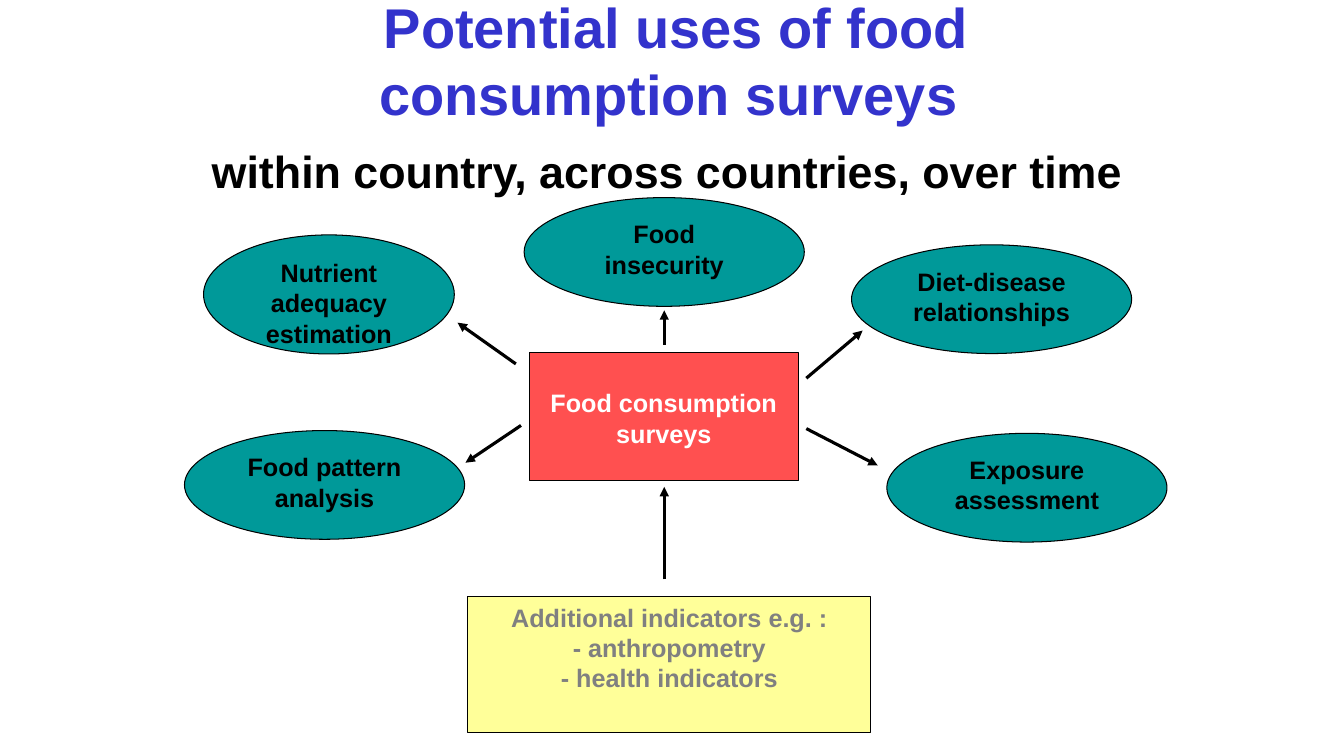
import pptx
import pptx.util
import pptx.dml.color
import pptx.enum.shapes
import pptx.enum.text
import pptx.oxml
import pptx.oxml.ns

Cm = pptx.util.Cm
Pt = pptx.util.Pt
SHAPE = pptx.enum.shapes.MSO_SHAPE
CENTER = pptx.enum.text.PP_ALIGN.CENTER


def color(hex_code):
    return pptx.dml.color.RGBColor.from_string(hex_code)


presentation = pptx.Presentation()
presentation.slide_width = Cm(33.87)
presentation.slide_height = Cm(19.05)
slide = presentation.slides.add_slide(presentation.slide_layouts[6])

# Title with subtitle
title = slide.shapes.add_textbox(Cm(4.93), Cm(0.43), Cm(24.21), Cm(3.99))
title.text_frame.word_wrap = True
title.text_frame.vertical_anchor = pptx.enum.text.MSO_ANCHOR.MIDDLE
paragraph = title.text_frame.paragraphs[0]
paragraph.alignment = CENTER
title_runs = [
    ("Potential uses of food consumption surveys ", 40, "3333CC"),
    ("within country, across countries, over time", 32, "000000"),
    (" ", 44, "000000"),
]
for index, (text, size, text_color) in enumerate(title_runs):
    if index == 1:
        paragraph.add_line_break()
    run = paragraph.add_run()
    run.text = text
    run.font.name = "Arial"
    run.font.size = Pt(size)
    run.font.bold = True
    run.font.color.rgb = color(text_color)

# Uses, surveys and indicators: preset, left, top, width, height, fill, text color, top margin, lines
OVAL_STYLE = ("009999", "000000", 0.13)
boxes = [
    (SHAPE.OVAL, 5.13, 5.92, 6.32, 3.0, *OVAL_STYLE, ["Nutrient adequacy estimation"]),
    (SHAPE.OVAL, 4.65, 10.85, 7.06, 2.74, *OVAL_STYLE, ["Food pattern analysis"]),
    (SHAPE.OVAL, 22.35, 10.92, 7.06, 2.74, *OVAL_STYLE, ["Exposure assessment"]),
    (SHAPE.OVAL, 21.46, 6.17, 7.06, 2.74, *OVAL_STYLE, ["Diet-disease relationships"]),
    (SHAPE.OVAL, 13.21, 4.98, 7.06, 2.74, *OVAL_STYLE, ["Food insecurity"]),
    (SHAPE.RECTANGLE, 13.34, 8.89, 6.78, 3.23, "FF5050", "FFFFFF", 0.88,
     ["Food consumption surveys"]),
    (SHAPE.RECTANGLE, 11.79, 15.04, 10.16, 3.43, "FFFF99", "808080", 0.13,
     ["Additional indicators e.g. :", "- anthropometry", "- health indicators"]),
]
for preset, left, top, width, height, fill, text_color, margin_top, lines in boxes:
    shape = slide.shapes.add_shape(preset, Cm(left), Cm(top), Cm(width), Cm(height))
    shape.shadow.inherit = False
    shape.fill.solid()
    shape.fill.fore_color.rgb = color(fill)
    shape.line.color.rgb = color("000000")
    shape.line.width = Pt(0.75)
    frame = shape.text_frame
    frame.word_wrap = True
    frame.vertical_anchor = pptx.enum.text.MSO_ANCHOR.TOP
    frame.margin_top = Cm(margin_top)
    frame.text = "\n".join(lines)
    for paragraph in frame.paragraphs:
        paragraph.alignment = CENTER
        paragraph.font.name = "Arial"
        paragraph.font.size = Pt(18)
        paragraph.font.bold = True
        paragraph.font.color.rgb = color(text_color)

# Arrows: start x, start y, end x, end y
arrows = [
    (16.74, 14.6, 16.74, 12.27),
    (13.13, 10.72, 11.73, 11.66),
    (13.0, 9.17, 11.53, 8.13),
    (16.74, 8.69, 16.74, 7.82),
    (20.32, 9.53, 21.74, 8.33),
    (20.32, 10.8, 22.12, 11.73),
]
for ends in arrows:
    arrow = slide.shapes.add_connector(
        pptx.enum.shapes.MSO_CONNECTOR.STRAIGHT, *[Cm(value) for value in ends])
    arrow.line.color.rgb = color("000000")
    arrow.line.width = Pt(2.25)
    head = pptx.oxml.parse_xml(
        f'<a:tailEnd {pptx.oxml.ns.nsdecls("a")} type="triangle"/>')
    arrow.line._get_or_add_ln().append(head)
    arrow._element.spPr.append(
        pptx.oxml.parse_xml(f'<a:effectLst {pptx.oxml.ns.nsdecls("a")}/>'))

presentation.save("out.pptx")
